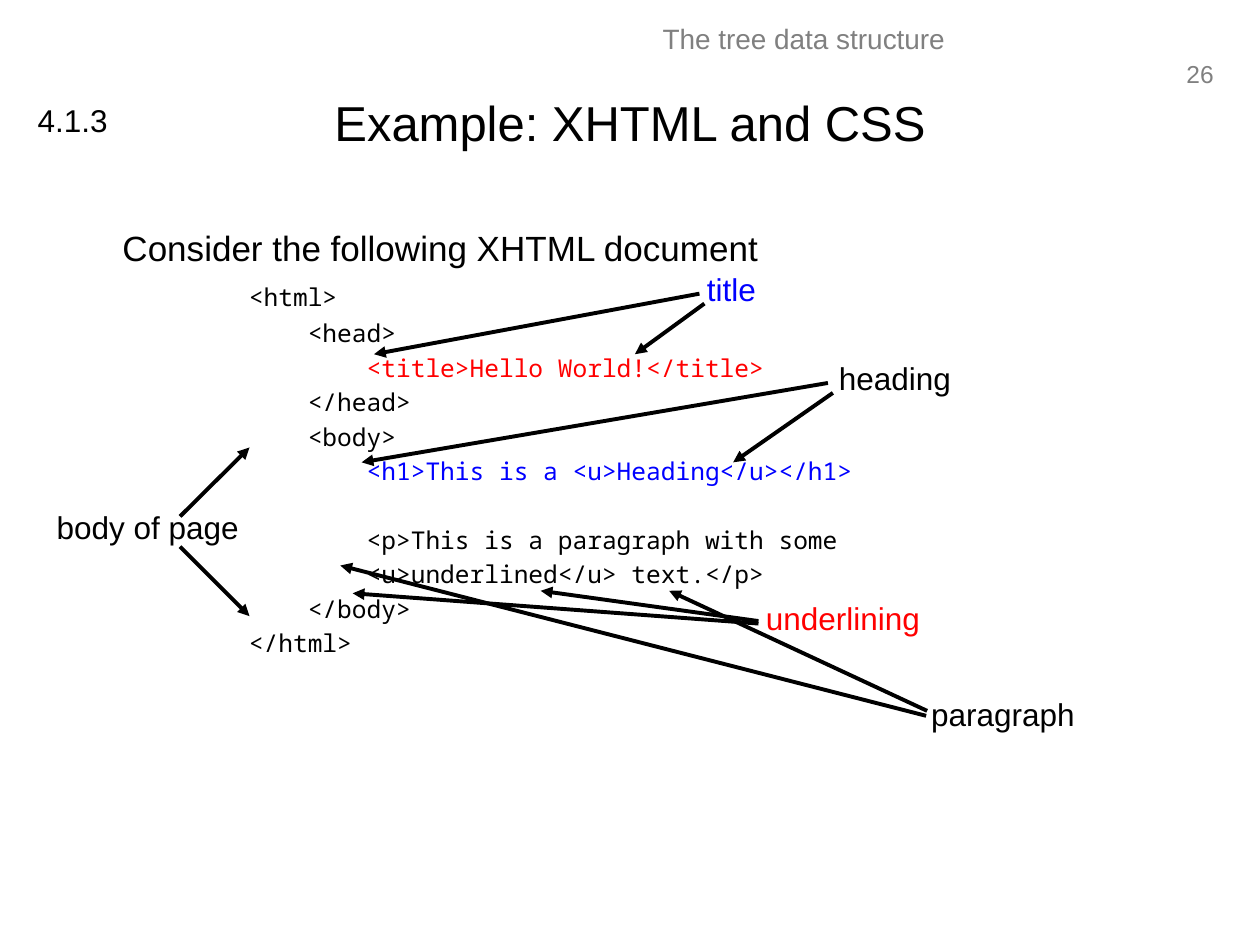
from lxml import etree
from pptx import Presentation
from pptx import util as u
from pptx.dml.color import RGBColor
from pptx.enum import shapes, text
from pptx.oxml.ns import qn

BLACK = RGBColor(0, 0, 0)
GRAY = RGBColor(0x80, 0x80, 0x80)
RED = RGBColor(0xFF, 0, 0)
BLUE = RGBColor(0, 0, 0xFF)
SANS, MONO = "Arial", "Noto Sans Mono"
LEFT, CENTER, RIGHT = text.PP_ALIGN.LEFT, text.PP_ALIGN.CENTER, text.PP_ALIGN.RIGHT

# Header texts: text, box (cm), size, colour, alignment, wrap
HEADERS = [
    ("26", (23.6, 1.07, 1.12, 0.84), 14, GRAY, RIGHT, False),
    ("The tree data structure", (8.1, 0.3, 16.21, 1.02), 16, GRAY, CENTER, True),
    ("Example: XHTML and CSS", (1.27, 1.74, 22.86, 1.22), 28, BLACK, CENTER, True),
    ("4.1.3", (0.51, 1.91, 1.93, 1.02), 18, BLACK, LEFT, False),
]

INTRO = "Consider the following XHTML document"
BODY_BOX = (1.27, 4.45, 22.86, 12.57)
INTRO_INDENT, CODE_INDENT = 0.95, 3.5

# Code lines: text, colour, space before (pt)
LINE_GAP, FIRST_GAP, HEAD_GAP, BLOCK_GAP = 2.9, 7.5, 3.8, 22.5
CODE = [
    ("<html>", BLACK, FIRST_GAP),
    ("    <head>", BLACK, HEAD_GAP),
    ("        <title>Hello World!</title>", RED, LINE_GAP),
    ("    </head>", BLACK, LINE_GAP),
    ("    <body>", BLACK, LINE_GAP),
    ("        <h1>This is a <u>Heading</u></h1>", BLUE, LINE_GAP),
    ("        <p>This is a paragraph with some", BLACK, BLOCK_GAP),
    ("        <u>underlined</u> text.</p>", BLACK, LINE_GAP),
    ("    </body>", BLACK, LINE_GAP),
    ("</html>", BLACK, LINE_GAP),
]

# Callouts: label, (left, top, width), colour, arrows as (x1, y1, x2, y2)
CALLOUTS = [
    ("title", (14, 5.31, 1.5), BLUE,
     [(14.1, 5.92, 7.54, 7.14), (14.2, 6.12, 12.8, 7.14)]),
    ("heading", (16.66, 7.11, 2.77), BLACK,
     [(16.69, 7.72, 7.29, 9.32), (16.79, 7.92, 14.78, 9.32)]),
    ("underlining", (15.19, 11.96, 3.61), RED,
     [(15.29, 12.52, 10.9, 11.91), (15.29, 12.57, 7.11, 11.96)]),
    ("paragraph", (18.52, 13.89, 3.4), BLACK,
     [(18.69, 14.33, 13.49, 11.91), (18.67, 14.43, 6.86, 11.4)]),
    ("body of page", (0.89, 10.11, 4.19), BLACK,
     [(3.63, 10.41, 5.03, 9.02), (3.63, 11.02, 5.03, 12.42)]),
]
LABEL_HEIGHT = 1.02


def cm(values):
    return [u.Cm(v) for v in values]


def style(p, size, color, font=SANS):
    for r in p.runs:
        r.font.name, r.font.size = font, u.Pt(size)
        r.font.color.rgb = color


def add_text(s, words, box, size, color, align=LEFT, wrap=False):
    tf = s.shapes.add_textbox(*cm(box)).text_frame
    tf.word_wrap = wrap
    tf.text = words
    p = tf.paragraphs[0]
    p.alignment = align
    style(p, size, color)


def add_arrow(s, ends):
    line = s.shapes.add_connector(shapes.MSO_CONNECTOR.STRAIGHT, *cm(ends))
    line.line.color.rgb = BLACK
    line.line.width = u.Pt(2.25)
    sp_pr = line._element.spPr
    etree.SubElement(sp_pr.find(qn("a:ln")), qn("a:tailEnd"), type="triangle")
    etree.SubElement(sp_pr, qn("a:effectLst"))


def indent(p, left):
    p._p.get_or_add_pPr().set("marL", str(u.Cm(left)))


def add_document(s):
    tf = s.shapes.add_textbox(*cm(BODY_BOX)).text_frame
    tf.word_wrap = True
    p = tf.paragraphs[0]
    p.text = INTRO
    indent(p, INTRO_INDENT)
    style(p, 20, BLACK)
    for words, color, gap in CODE:
        p = tf.add_paragraph()
        p.text = words
        p.space_before = u.Pt(gap)
        indent(p, CODE_INDENT)
        style(p, 14, color, MONO)


def main():
    prs = Presentation()
    prs.slide_width, prs.slide_height = u.Cm(25.4), u.Cm(19.05)
    s = prs.slides.add_slide(prs.slide_layouts[6])

    # Header and title
    for header in HEADERS:
        add_text(s, *header)

    # Intro and code
    add_document(s)

    # Labels with their arrows
    for label, place, color, arrows in CALLOUTS:
        for ends in arrows:
            add_arrow(s, ends)
        add_text(s, label, (*place, LABEL_HEIGHT), 18, color)

    prs.save("out.pptx")


if __name__ == "__main__":
    main()
